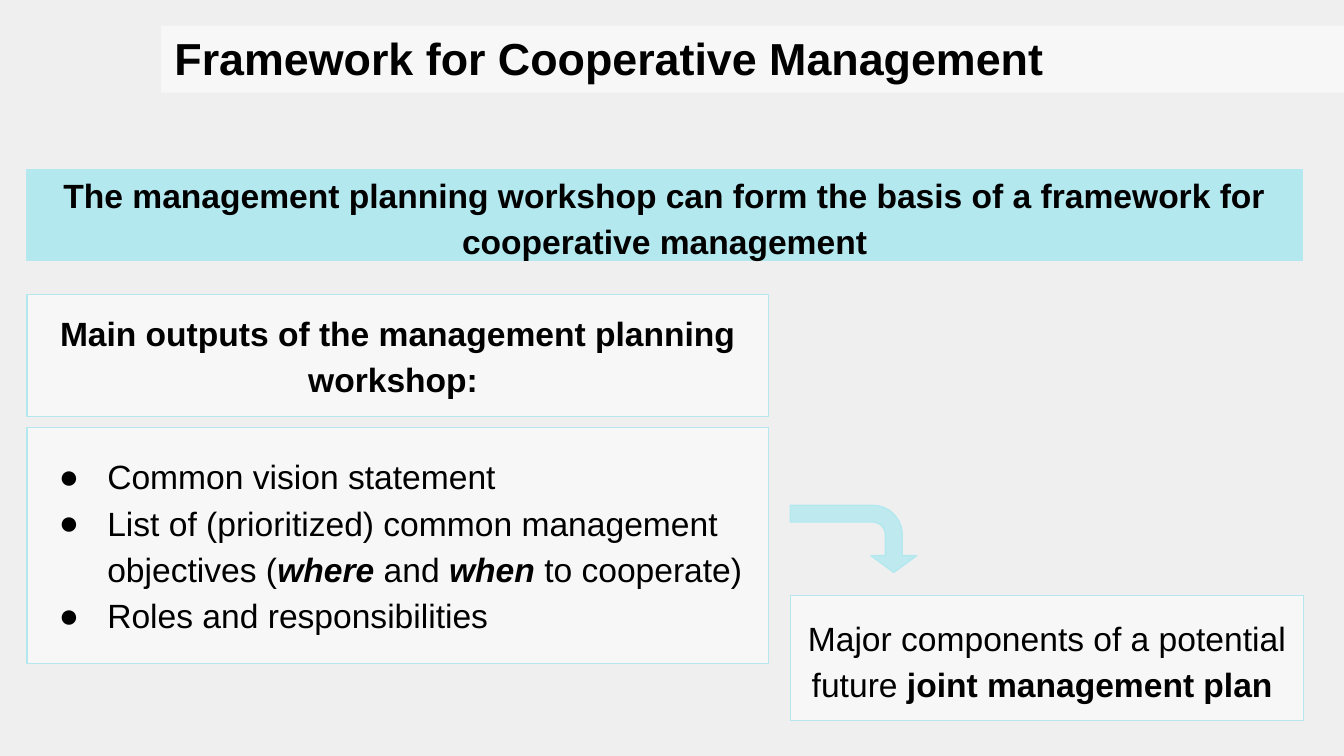
from lxml import etree
from pptx import Presentation
from pptx.dml.color import RGBColor
from pptx.enum.shapes import MSO_SHAPE as Shape
from pptx.enum.text import MSO_ANCHOR as Anchor, PP_ALIGN as Align
from pptx.oxml.ns import qn
from pptx.util import Inches, Pt

COLORS = {"background": "EFEFEF", "panel": "FFFFFF", "aqua": "B3E8EF", "text": "000000"}


def add_block(kind, place, fill, opacity=100, outlined=True):
    block = slide.shapes.add_shape(kind, *[Inches(v) for v in place])
    block.shadow.inherit = False
    block.fill.solid()
    block.fill.fore_color.rgb = RGBColor.from_string(COLORS[fill])
    if opacity < 100:
        tint = block.fill._xPr.find(qn("a:solidFill"))[0]
        etree.SubElement(tint, qn("a:alpha"), val=str(opacity * 1000))
    if outlined:
        block.line.color.rgb = RGBColor.from_string(COLORS["aqua"])
        block.line.width = Pt(0.75)
    else:
        block.line.fill.background()
    return block


def write_text(block, paragraphs, size=18, align=Align.CENTER, spacing=1.15, inset=0.1, lift=0, bullet=None):
    frame = block.text_frame
    frame_format = {
        "word_wrap": True,
        "vertical_anchor": Anchor.MIDDLE,
        "margin_left": Inches(0.1),
        "margin_right": Inches(0.1),
        "margin_top": Inches(inset - lift),
        "margin_bottom": Inches(inset + lift),
    }
    for name, value in frame_format.items():
        setattr(frame, name, value)
    for index, runs in enumerate(paragraphs):
        paragraph = frame.add_paragraph() if index else frame.paragraphs[0]
        paragraph.alignment = align
        paragraph.line_spacing = spacing
        if bullet:
            properties = paragraph._p.get_or_add_pPr()
            properties.set("marL", str(Inches(0.5)))
            properties.set("indent", str(Inches(-0.36)))
            bullet_color = etree.SubElement(properties, qn("a:buClr"))
            etree.SubElement(bullet_color, qn("a:srgbClr"), val=COLORS["text"])
            etree.SubElement(properties, qn("a:buSzPts"), val=str(size * 100))
            etree.SubElement(properties, qn("a:buFont"), typeface="Arial")
            etree.SubElement(properties, qn("a:buChar"), char=bullet)
        for words, style in runs:
            run = paragraph.add_run()
            run.text = words
            run.font.color.rgb = RGBColor.from_string(COLORS["text"])
            run_format = {"name": "Arial", "size": Pt(size), "bold": "b" in style, "italic": "i" in style}
            for name, value in run_format.items():
                setattr(run.font, name, value)


deck = Presentation()
deck.slide_width = Inches(10)
deck.slide_height = deck.slide_width * 9 // 16
slide = deck.slides.add_slide(deck.slide_layouts[6])
slide.background.fill.solid()
slide.background.fill.fore_color.rgb = RGBColor.from_string(COLORS["background"])

outputs = add_block(Shape.RECTANGLE, (0.2, 3.18, 5.52, 1.76), "panel", 54)
write_text(outputs, [
    [("Common vision statement", "")],
    [("List of (prioritized) common management objectives (", ""), ("where", "bi"),
     (" and ", ""), ("when", "bi"), (" to cooperate)", "")],
    [("Roles and responsibilities", "")],
], align=Align.LEFT, lift=0.02, bullet="●")

joint_plan = add_block(Shape.RECTANGLE, (5.88, 4.43, 3.82, 0.93), "panel", 54)
write_text(joint_plan, [
    [("Major components of a potential ", "")],
    [("future ", ""), ("joint management plan ", "b")],
])

outputs_heading = add_block(Shape.RECTANGLE, (0.2, 2.19, 5.52, 0.91), "panel", 54)
write_text(outputs_heading, [[("Main outputs of the management planning workshop: ", "b")]], lift=0.02)

plan_arrow = add_block(Shape.BENT_ARROW, (6.1, 3.54, 0.5, 0.94), "aqua", 82)
plan_arrow.rotation = 90
for index, value in enumerate((0.25, 0.34, 0.25, 0.44)):
    plan_arrow.adjustments[index] = value

message = add_block(Shape.RECTANGLE, (0.2, 1.26, 9.49, 0.68), "aqua")
write_text(message, [[(
    "The management planning workshop can form the basis of a framework for cooperative management", "b")]])

title = add_block(Shape.RECTANGLE, (1.2, 0.19, 8.8, 0.5), "panel", 55, outlined=False)
write_text(title, [[("Framework for Cooperative Management", "b")]],
           size=24, align=Align.LEFT, spacing=1.0, inset=0.05, lift=0.01)

deck.save("out.pptx")
